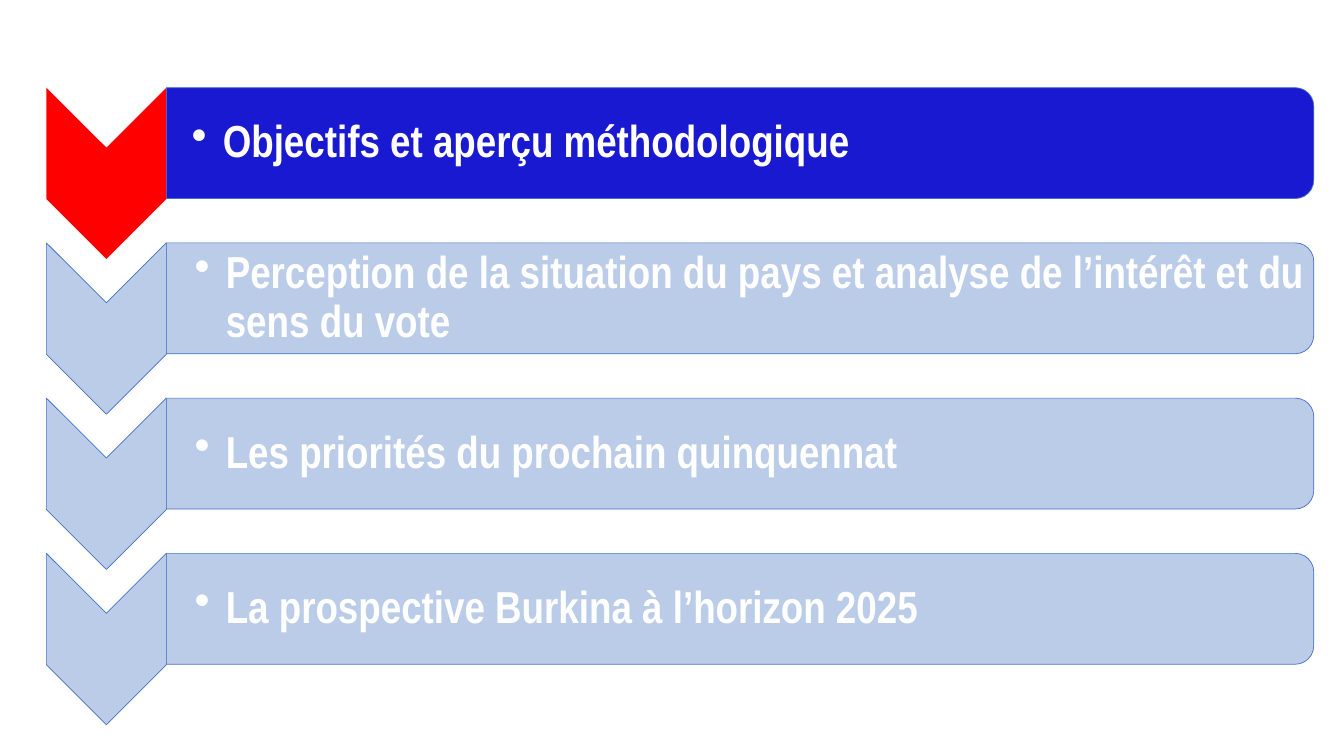
import pptx
import pptx.util
import pptx.dml.color
import pptx.enum.shapes
import pptx.enum.text
import pptx.oxml.ns
import lxml.etree

RGBColor = pptx.dml.color.RGBColor
SHAPE = pptx.enum.shapes.MSO_SHAPE
RED = RGBColor(0xFF, 0x00, 0x00)
DEEP_BLUE = RGBColor(0x00, 0x00, 0xCC)
PALE_BLUE = RGBColor(0xB4, 0xC7, 0xE7)
EDGE_BLUE = RGBColor(0x44, 0x72, 0xC4)
WHITE = RGBColor(0xFF, 0xFF, 0xFF)

# Grid: 1333 columns by 750 rows of square cells
COLUMNS, ROWS = 1333, 750
CELL = pptx.util.Inches(0.01)
FIRST_ROW, ROW_PITCH = 87, 154
CHEVRON_LEFT, CHEVRON_WIDTH, CHEVRON_HEIGHT = 46, 119, 170
BAND_LEFT = CHEVRON_LEFT + CHEVRON_WIDTH
BAND_WIDTH, BAND_HEIGHT = 1138, 110
TOPIC_WIDTH, TOPIC_HEIGHT = 1133, 100
HANGING = 31

# Topic, chevron colour, band colour, left inset, other insets
agenda = [
    ("Objectifs et aperçu méthodologique", RED, DEEP_BLUE, 25, 2),
    ("Perception de la situation du pays et analyse de l’intérêt et du sens du vote",
     PALE_BLUE, PALE_BLUE, 28, 3),
    ("Les priorités du prochain quinquennat", PALE_BLUE, PALE_BLUE, 28, 3),
    ("La prospective Burkina à l’horizon 2025", PALE_BLUE, PALE_BLUE, 28, 3),
]

presentation = pptx.Presentation()
presentation.slide_width = COLUMNS * CELL
presentation.slide_height = ROWS * CELL
slide = presentation.slides.add_slide(presentation.slide_layouts[6])


def add_turned(preset, left, top, width, height, color):
    """Add a shape turned by 90 degrees that fills the given grid area."""
    shift = (width - height) / 2
    shape = slide.shapes.add_shape(
        preset, int((left + shift) * CELL), int((top - shift) * CELL),
        height * CELL, width * CELL)
    shape.rotation = 90
    shape.shadow.inherit = False
    shape.fill.solid()
    shape.fill.fore_color.rgb = color
    if color == RED:
        shape.line.fill.background()
        return
    shape.line.color.rgb = EDGE_BLUE
    shape.line.width = pptx.util.Pt(0.5)
    # 90 % opacity
    fill_color = shape.fill._xPr.find(".//" + pptx.oxml.ns.qn("a:srgbClr"))
    lxml.etree.SubElement(fill_color, pptx.oxml.ns.qn("a:alpha"), val="90000")


for index, (topic, chevron_color, band_color, indent, inset) in enumerate(agenda):
    top = FIRST_ROW + index * ROW_PITCH

    # Chevron and band
    add_turned(SHAPE.CHEVRON, CHEVRON_LEFT, top, CHEVRON_WIDTH, CHEVRON_HEIGHT,
               chevron_color)
    add_turned(SHAPE.ROUND_2_SAME_RECTANGLE, BAND_LEFT, top, BAND_WIDTH, BAND_HEIGHT,
               band_color)

    # Topic, centred on the band's height
    topic_top = top + (BAND_HEIGHT - TOPIC_HEIGHT) // 2
    topic_box = slide.shapes.add_textbox(
        BAND_LEFT * CELL, topic_top * CELL, TOPIC_WIDTH * CELL, TOPIC_HEIGHT * CELL)
    frame = topic_box.text_frame
    frame.word_wrap = True
    frame.vertical_anchor = pptx.enum.text.MSO_ANCHOR.MIDDLE
    frame.margin_left = indent * CELL
    frame.margin_top = frame.margin_right = frame.margin_bottom = inset * CELL
    paragraph = frame.paragraphs[0]
    paragraph.text = topic
    paragraph.line_spacing = 0.9
    paragraph.font.name = "Arial Narrow"
    paragraph.font.size = pptx.util.Pt(32)
    paragraph.font.bold = True
    paragraph.font.color.rgb = WHITE

    # Bullet with hanging indent
    properties = paragraph._p.get_or_add_pPr()
    properties.set("marL", str(HANGING * CELL))
    properties.set("indent", str(-HANGING * CELL))
    bullet = lxml.etree.Element(pptx.oxml.ns.qn("a:buChar"), char="•")
    properties.find(pptx.oxml.ns.qn("a:defRPr")).addprevious(bullet)

presentation.save("out.pptx")
